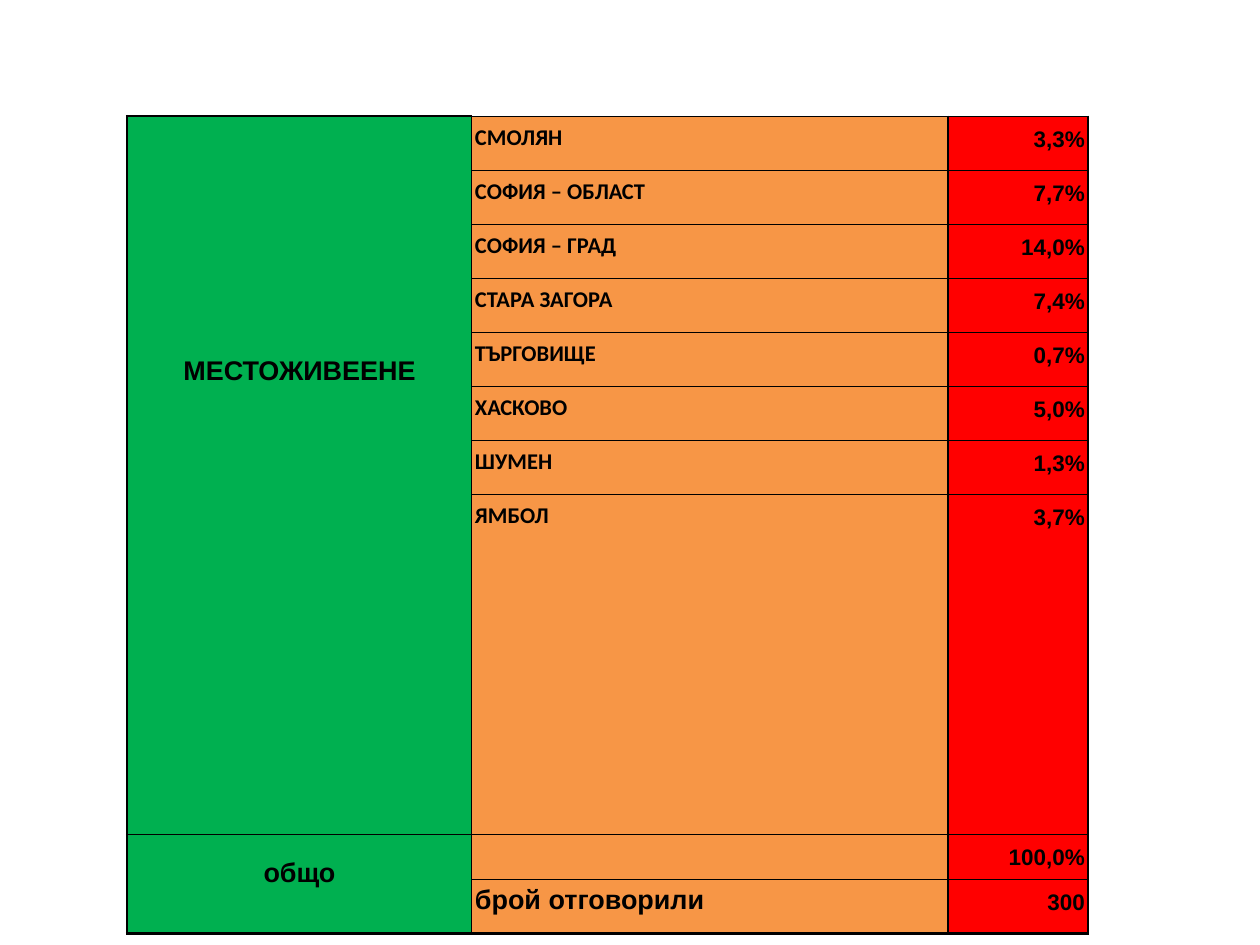
from dataclasses import dataclass
from typing import Optional

from lxml.etree import SubElement
from pptx import Presentation
from pptx.dml.color import RGBColor
from pptx.enum.text import MSO_ANCHOR as Anchor, PP_ALIGN as Align
from pptx.oxml.ns import qn
from pptx.util import Emu, Pt

EMU_PER_PX = 11314
LINE_PX = 18
SIDE_PX = 3
THIN, THICK = 1, 2.25

BLACK = RGBColor(0x00, 0x00, 0x00)
GREEN = RGBColor(0x00, 0xB0, 0x50)
ORANGE = RGBColor(0xF7, 0x96, 0x46)
RED = RGBColor(0xFF, 0x00, 0x00)


@dataclass(frozen=True)
class Column:
    width: int
    fill: RGBColor
    align: Align
    left: float
    right: float


@dataclass(frozen=True)
class Row:
    label: str
    value: str
    height: int = 54
    label_font: str = "Calibri"
    label_size: int = 20


@dataclass(frozen=True)
class Group:
    title: str
    first: int
    last: int
    lines_above: int


COLUMNS = [
    Column(345, GREEN, Align.CENTER, THICK, THIN),
    Column(476, ORANGE, Align.LEFT, THIN, THICK),
    Column(140, RED, Align.RIGHT, THICK, THICK),
]
ROWS = [
    Row("СМОЛЯН", "3,3%"),
    Row("СОФИЯ – ОБЛАСТ", "7,7%"),
    Row("СОФИЯ – ГРАД", "14,0%"),
    Row("СТАРА ЗАГОРА", "7,4%"),
    Row("ТЪРГОВИЩЕ", "0,7%"),
    Row("ХАСКОВО", "5,0%"),
    Row("ШУМЕН", "1,3%"),
    Row("ЯМБОЛ", "3,7%", height=340),
    Row("", "100,0%", height=36),
    Row("брой отговорили", "300", label_font="Arial", label_size=24),
]
GROUPS = [Group("МЕСТОЖИВЕЕНЕ", 0, 7, 14), Group("общо", 8, 9, 2)]


def px(length: int) -> Emu:
    return Emu(length * EMU_PER_PX)


def set_borders(cell, **widths: float) -> None:
    properties = cell._tc.get_or_add_tcPr()
    for side, tag in (("left", "a:lnL"), ("right", "a:lnR"), ("top", "a:lnT"), ("bottom", "a:lnB")):
        line = SubElement(properties, qn(tag), w=str(Pt(widths[side])))
        if widths[side]:
            fill = SubElement(line, qn("a:solidFill"))
            SubElement(fill, qn("a:srgbClr"), val=str(BLACK))
        else:
            SubElement(line, qn("a:noFill"))


def write_text(cell, text: str, *, align: Align, font: str = "Arial", size: int = 20,
               lines_above: int = 1) -> None:
    cell.margin_top = px(lines_above * LINE_PX)
    paragraph = cell.text_frame.paragraphs[0]
    paragraph.alignment = align
    paragraph.line_spacing = Pt(16)
    paragraph.font.size = Pt(size)
    if text:
        run = paragraph.add_run()
        run.text = text
        run.font.name = font
        run.font.size = Pt(size)
        run.font.bold = True
        run.font.color.rgb = BLACK


def format_cell(cell, column: Column, top: float, bottom: float) -> None:
    cell.margin_left = cell.margin_right = px(SIDE_PX)
    cell.margin_top = cell.margin_bottom = 0
    cell.vertical_anchor = Anchor.TOP
    set_borders(cell, left=column.left, right=column.right, top=top, bottom=bottom)
    cell.fill.solid()
    cell.fill.fore_color.rgb = column.fill


def find_group(row_index: int) -> Optional[Group]:
    return next((group for group in GROUPS if group.first == row_index), None)


def add_residence_table(slide) -> None:
    width = sum(column.width for column in COLUMNS)
    height = sum(row.height for row in ROWS)
    frame = slide.shapes.add_table(len(ROWS), len(COLUMNS), px(127), px(116), px(width), px(height))
    table = frame.table
    table.first_row = table.horz_banding = False
    for index, column in enumerate(COLUMNS):
        table.columns[index].width = px(column.width)

    group_column, label_column, value_column = COLUMNS
    last_row = len(ROWS) - 1
    for index, row in enumerate(ROWS):
        table.rows[index].height = px(row.height)
        group_cell, label_cell, value_cell = table.rows[index].cells
        bottom = THICK if index == last_row else THIN
        format_cell(label_cell, label_column, THIN, bottom)
        format_cell(value_cell, value_column, THIN, bottom)
        write_text(label_cell, row.label, align=label_column.align, font=row.label_font,
                   size=row.label_size)
        write_text(value_cell, row.value, align=value_column.align)

        group = find_group(index)
        if group:
            top = THIN if index else THICK
            group_bottom = THICK if group.last == last_row else THIN
            format_cell(group_cell, group_column, top, group_bottom)
            write_text(group_cell, group.title, align=group_column.align, size=24,
                       lines_above=group.lines_above)
            group_cell.merge(table.cell(group.last, 0))
        else:
            ends_group = any(group.last == index for group in GROUPS)
            format_cell(group_cell, group_column, 0, bottom if ends_group else 0)


def main() -> None:
    presentation = Presentation()
    presentation.slide_width = px(1260)
    presentation.slide_height = px(945)
    slide = presentation.slides.add_slide(presentation.slide_layouts[6])
    add_residence_table(slide)
    presentation.save("out.pptx")


if __name__ == "__main__":
    main()
